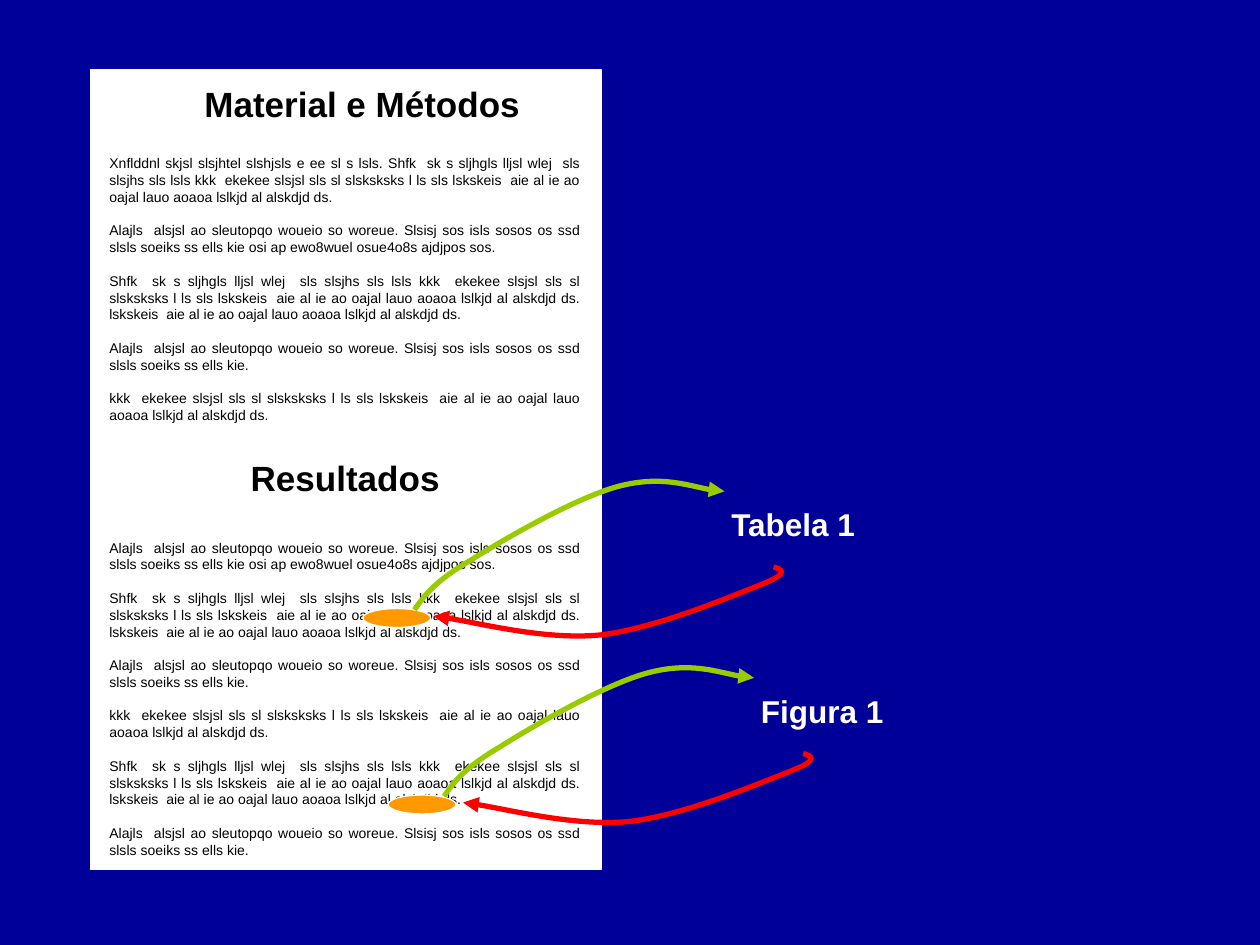
import pptx
import pptx.util
import pptx.dml.color
import pptx.enum.shapes
import pptx.enum.text
import pptx.oxml
import pptx.oxml.ns

RGBColor = pptx.dml.color.RGBColor
NAVY = RGBColor(0x00, 0x00, 0x99)
WHITE = RGBColor(0xFF, 0xFF, 0xFF)
BLACK = RGBColor(0x00, 0x00, 0x00)
ORANGE = RGBColor(0xFF, 0x99, 0x00)
GREEN = RGBColor(0x99, 0xCC, 0x00)
RED = RGBColor(0xFF, 0x00, 0x00)

ALIGN = pptx.enum.text.PP_ALIGN
PRESET = pptx.enum.shapes.MSO_SHAPE
COLUMNS, ROWS = 100, 75

OPENING = ("Xnflddnl skjsl slsjhtel slshjsls e ee sl s lsls. Shfk  sk s sljhgls lljsl wlej  sls "
           "slsjhs sls lsls kkk  ekekee slsjsl sls sl slsksksks l ls sls lskskeis  aie al ie ao "
           "oajal lauo aoaoa lslkjd al alskdjd ds.")
SHORT = ("Alajls  alsjsl ao sleutopqo woueio so woreue. Slsisj sos isls sosos os ssd "
         "slsls soeiks ss ells kie.")
DETAILED = SHORT[:-1] + " osi ap ewo8wuel osue4o8s ajdjpos sos."
CLOSING = ("kkk  ekekee slsjsl sls sl slsksksks l ls sls lskskeis  aie al ie ao oajal lauo "
           "aoaoa lslkjd al alskdjd ds.")
LONG = ("Shfk  sk s sljhgls lljsl wlej  sls slsjhs sls lsls " + CLOSING
        + " lskskeis  aie al ie ao oajal lauo aoaoa lslkjd al alskdjd ds.")
METHODS = [OPENING, DETAILED, LONG, SHORT, CLOSING]
RESULTS = [DETAILED, LONG, SHORT, CLOSING, LONG, SHORT]

# Start point, then three points (two controls and an end) for each curve segment
TO_LABEL = [(32.9, 48.4), (33.7, 47.2), (34.6, 46.1), (37.3, 44.5), (40, 42.8),
            (45.7, 39.5), (49.1, 38.6), (52.5, 37.7), (56.1, 39), (57.5, 39)]
TO_TEXT = [(61.4, 45), (62.1, 45.2), (62.7, 45.5), (60.4, 46.4), (58.1, 47.3),
           (52, 49.9), (47.6, 50.4), (43.3, 50.8), (36.6, 49.1), (34.4, 48.9)]


class SlideBuilder:
    """Places elements on a grid of COLUMNS by ROWS cells."""

    font = "Arial"

    def __init__(self, deck):
        self.deck = deck
        self.slide = deck.slides.add_slide(deck.slide_layouts[5])
        self.slide.background.fill.solid()
        self.slide.background.fill.fore_color.rgb = NAVY

    def x(self, columns):
        return round(self.deck.slide_width * columns / COLUMNS)

    def y(self, rows):
        return round(self.deck.slide_height * rows / ROWS)

    def box(self, left, top, width, height):
        return self.x(left), self.y(top), self.x(width), self.y(height)

    def panel(self, preset, area, fill):
        panel = self.slide.shapes.add_shape(preset, *self.box(*area))
        panel.shadow.inherit = False
        panel.fill.solid()
        panel.fill.fore_color.rgb = fill
        panel.line.color.rgb = WHITE
        panel.line.width = pptx.util.Pt(0.75)

    def add_text(self, paragraph, text, size, color, bold=False, align=ALIGN.CENTER,
                 before=0, after=0):
        paragraph.alignment = align
        paragraph.space_before = pptx.util.Pt(before)
        paragraph.space_after = pptx.util.Pt(after)
        run = paragraph.add_run()
        run.text = text
        run.font.name = self.font
        run.font.size = pptx.util.Pt(size)
        run.font.bold = bold
        run.font.color.rgb = color

    def title(self, text, area):
        title = self.slide.shapes.title
        title.left, title.top, title.width, title.height = self.box(*area)
        title.text_frame.word_wrap = False
        self.add_text(title.text_frame.paragraphs[0], text, 20, BLACK, bold=True)
        # Bring the title in front of the page drawn so far
        title.element.getparent().append(title.element)

    def text_box(self, area, wrap):
        frame = self.slide.shapes.add_textbox(*self.box(*area)).text_frame
        frame.word_wrap = wrap
        frame.auto_size = pptx.enum.text.MSO_AUTO_SIZE.SHAPE_TO_FIT_TEXT
        return frame

    def label(self, text, area):
        self.add_text(self.text_box(area, False).paragraphs[0], text, 18, WHITE, bold=True)

    def body(self, area, methods, heading, results):
        frame = self.text_box(area, True)
        paragraph = frame.paragraphs[0]
        for number, text in enumerate(methods):
            self.add_text(paragraph, text, 8, BLACK, align=ALIGN.JUSTIFY,
                          before=9.6 if number else 0)
            paragraph = frame.add_paragraph()
        self.add_text(paragraph, heading, 20, BLACK, bold=True, before=19.2, after=23)
        for number, text in enumerate(results):
            self.add_text(frame.add_paragraph(), text, 8, BLACK, align=ALIGN.JUSTIFY,
                          before=9.6 if number else 0)

    def curved_arrow(self, points, color):
        start, *rest = [(self.x(column), self.y(row)) for column, row in points]
        builder = self.slide.shapes.build_freeform(*start)
        builder.add_line_segments(rest, close=False)
        arrow = builder.convert_to_shape()
        arrow.shadow.inherit = False
        arrow.fill.background()
        arrow.line.color.rgb = color
        arrow.line.width = pptx.util.Pt(3)
        arrow.element.spPr.get_or_add_ln().append(pptx.oxml.parse_xml(
            '<a:tailEnd %s type="triangle"/>' % pptx.oxml.ns.nsdecls("a")))
        self.bend(arrow)

    def bend(self, outline):
        """Turn every three straight segments into one cubic curve."""
        lines = outline.element.xpath(".//a:lnTo")
        for first in range(0, len(lines), 3):
            curve = pptx.oxml.parse_xml("<a:cubicBezTo %s/>" % pptx.oxml.ns.nsdecls("a"))
            lines[first].addprevious(curve)
            for line in lines[first:first + 3]:
                curve.append(line[0])
                line.getparent().remove(line)

    def reference(self, label, mark_left, label_width, right=0, down=0):
        """Mark a spot in the text and link it to a label and back."""
        def shift(points):
            return [(column + right, row + down) for column, row in points]

        self.panel(PRESET.OVAL, (mark_left, 48.3 + down, 5.4, 1.5), ORANGE)
        self.curved_arrow(shift(TO_LABEL), GREEN)
        self.label(label, (57 + right, 39.6 + down, label_width, 4))
        self.curved_arrow(shift(TO_TEXT), RED)


def main():
    deck = pptx.Presentation()
    deck.slide_width = pptx.util.Inches(10)
    deck.slide_height = pptx.util.Inches(7.5)

    article = SlideBuilder(deck)
    article.panel(PRESET.RECTANGLE, (7.2, 5.5, 40.5, 63.5), WHITE)
    article.title("Material e Métodos", (15.1, 6, 27.3, 4.4))
    article.body((7.7, 11.8, 39.4, 58.9), METHODS, "Resultados", RESULTS)
    article.reference("Tabela 1", 28.8, 11.9)
    article.reference("Figura 1", 30.8, 11.8, right=2.35, down=14.8)

    deck.save("out.pptx")


if __name__ == "__main__":
    main()
